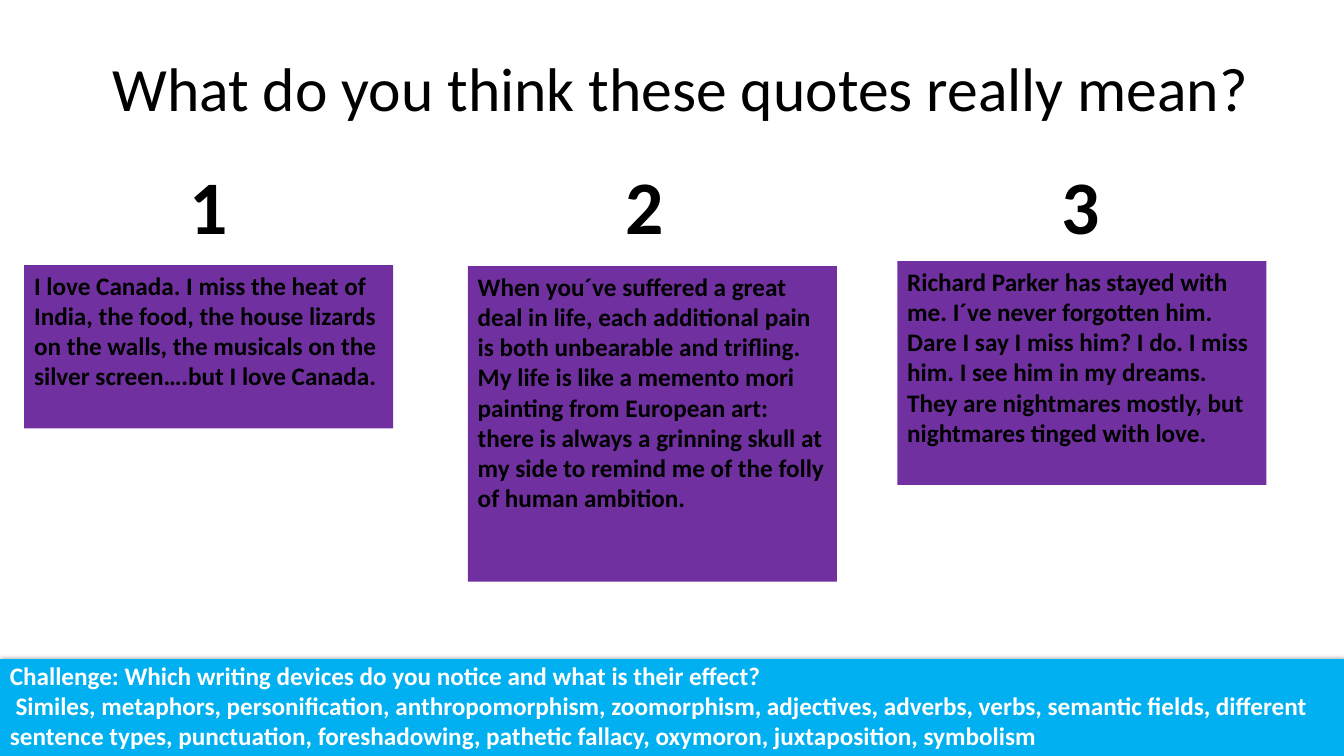
from dataclasses import dataclass

from lxml import etree
from pptx import Presentation
from pptx.dml.color import RGBColor
from pptx.enum.shapes import MSO_SHAPE
from pptx.enum.text import MSO_ANCHOR, PP_ALIGN
from pptx.oxml.ns import qn
from pptx.shapes.autoshape import Shape
from pptx.slide import Slide
from pptx.text.text import TextFrame
from pptx.util import Inches, Pt

RECTANGLE = MSO_SHAPE.RECTANGLE
TOP, MIDDLE, BOTTOM = MSO_ANCHOR.TOP, MSO_ANCHOR.MIDDLE, MSO_ANCHOR.BOTTOM
LEFT, CENTER = PP_ALIGN.LEFT, PP_ALIGN.CENTER


@dataclass(frozen=True)
class Theme:
    font: str = "Calibri"
    title_size: int = 44
    number_size: int = 54
    body_size: int = 18
    black: str = "000000"
    white: str = "FFFFFF"
    purple: str = "7030A0"
    blue: str = "00B0F0"


@dataclass(frozen=True)
class Quote:
    text: str
    left: float
    top: float
    height: float


THEME = Theme()
SLIDE_WIDTH, SLIDE_HEIGHT = 13.33, 7.5
QUOTE_WIDTH = 3.66
NUMBER_LEFT, NUMBER_TOP, NUMBER_PITCH = 1.76, 1.53, 4.32
NUMBER_WIDTH, NUMBER_HEIGHT = 0.63, 1.01
BANNER_HEIGHT = 0.96

TITLE = "What do you think these quotes really mean?"
QUOTES = [
    Quote("I love Canada. I miss the heat of India, the food, the house lizards on the walls, "
          "the musicals on the silver screen….but I love Canada.", 0.24, 2.63, 1.62),
    Quote("When you´ve suffered a great deal in life, each additional pain is both unbearable "
          "and trifling. My life is like a memento mori painting from European art: there is "
          "always a grinning skull at my side to remind me of the folly of human ambition.",
          4.64, 2.64, 3.13),
    Quote("Richard Parker has stayed with me. I´ve never forgotten him. Dare I say I miss him? "
          "I do. I miss him. I see him in my dreams. They are nightmares mostly, but nightmares "
          "tinged with love.", 8.9, 2.59, 2.22),
]
CHALLENGE = (
    "Challenge: Which writing devices do you notice and what is their effect?\n"
    " Similes, metaphors, personification, anthropomorphism, zoomorphism, adjectives, adverbs, "
    "verbs, semantic fields, different sentence types, punctuation, foreshadowing, pathetic "
    "fallacy, oxymoron, juxtaposition, symbolism"
)


def write_text(frame: TextFrame, text: str, size: int, color: str, bold: bool = True,
               alignment: PP_ALIGN = LEFT, anchor: MSO_ANCHOR = TOP, wrap: bool = True) -> None:
    frame.text = text
    frame.word_wrap = wrap
    frame.vertical_anchor = anchor
    for paragraph in frame.paragraphs:
        paragraph.alignment = alignment
        for run in paragraph.runs:
            run.font.name = THEME.font
            run.font.size = Pt(size)
            run.font.bold = bold
            run.font.color.rgb = RGBColor.from_string(color)


def add_panel(slide: Slide, left: float, top: float, width: float, height: float,
              color: str) -> Shape:
    panel = slide.shapes.add_shape(RECTANGLE, Inches(left), Inches(top),
                                   Inches(width), Inches(height))
    panel.shadow.inherit = False
    panel.fill.solid()
    panel.fill.fore_color.rgb = RGBColor.from_string(color)
    panel.line.fill.background()
    return panel


def add_soft_shadow(shape: Shape) -> None:
    effects = shape.element.spPr.find(qn("a:effectLst"))
    shadow = etree.SubElement(effects, qn("a:outerShdw"), blurRad=str(Pt(4)), dist="0",
                              dir=str(240 * 60000), rotWithShape="0")
    color = etree.SubElement(shadow, qn("a:srgbClr"), val=THEME.black)
    etree.SubElement(color, qn("a:alpha"), val="60000")


def add_title(slide: Slide) -> None:
    title = slide.shapes.title
    title.left, title.top = Inches(0.49), Inches(0.38)
    title.width, title.height = Inches(12.53), Inches(1.06)
    write_text(title.text_frame, TITLE, THEME.title_size, THEME.black, bold=False,
               alignment=CENTER, anchor=MIDDLE)
    title.text_frame.paragraphs[0].line_spacing = 0.9


def add_challenge(slide: Slide) -> None:
    banner = add_panel(slide, 0, SLIDE_HEIGHT - BANNER_HEIGHT, SLIDE_WIDTH, BANNER_HEIGHT,
                       THEME.blue)
    add_soft_shadow(banner)
    write_text(banner.text_frame, CHALLENGE, THEME.body_size, THEME.white, anchor=BOTTOM)


def add_quote(slide: Slide, quote: Quote) -> None:
    panel = add_panel(slide, quote.left, quote.top, QUOTE_WIDTH, quote.height, THEME.purple)
    write_text(panel.text_frame, quote.text, THEME.body_size, THEME.black)


def add_number(slide: Slide, index: int) -> None:
    box = slide.shapes.add_textbox(Inches(NUMBER_LEFT + index * NUMBER_PITCH), Inches(NUMBER_TOP),
                                   Inches(NUMBER_WIDTH), Inches(NUMBER_HEIGHT))
    write_text(box.text_frame, str(index + 1), THEME.number_size, THEME.black,
               alignment=CENTER, wrap=False)


def main() -> None:
    presentation = Presentation()
    presentation.slide_width = Inches(SLIDE_WIDTH)
    presentation.slide_height = Inches(SLIDE_HEIGHT)
    title_only_layout = presentation.slide_layouts[5]
    slide = presentation.slides.add_slide(title_only_layout)
    add_title(slide)
    add_challenge(slide)
    for index, quote in enumerate(QUOTES):
        add_quote(slide, quote)
        add_number(slide, index)
    presentation.save("out.pptx")


if __name__ == "__main__":
    main()
